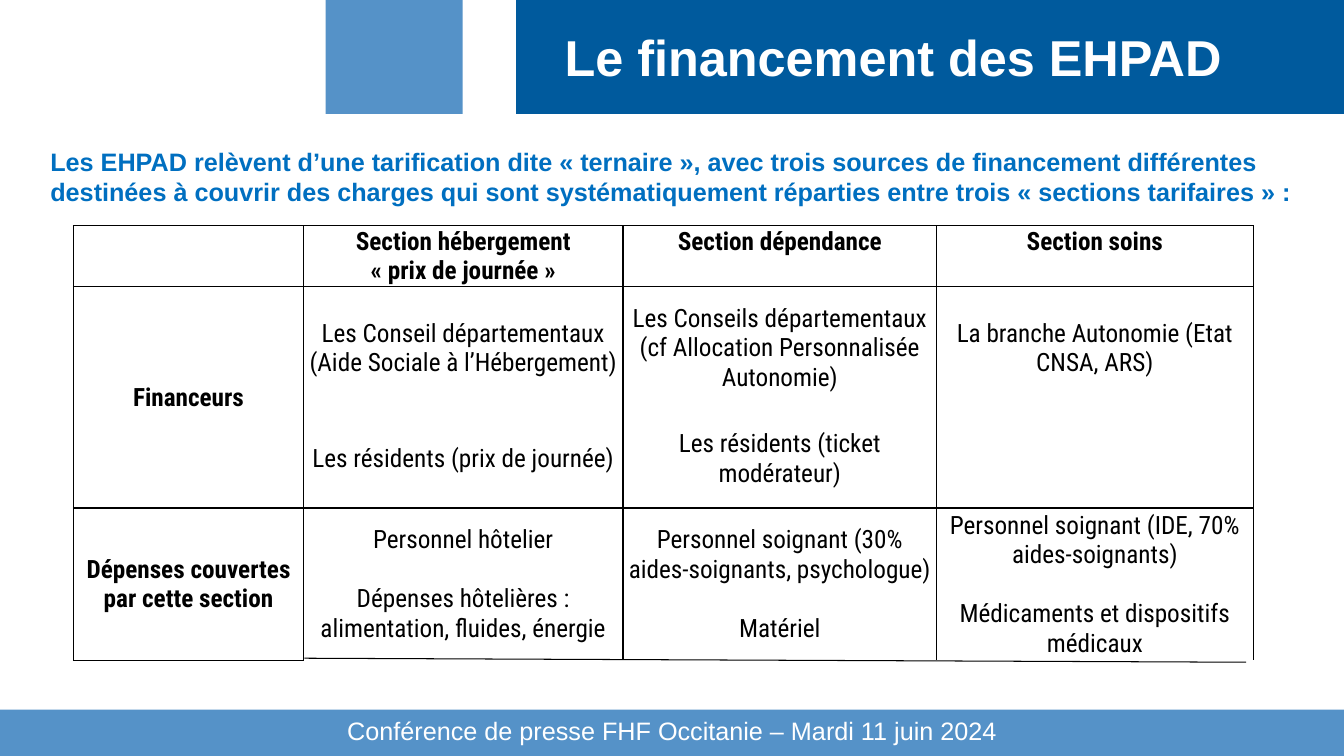
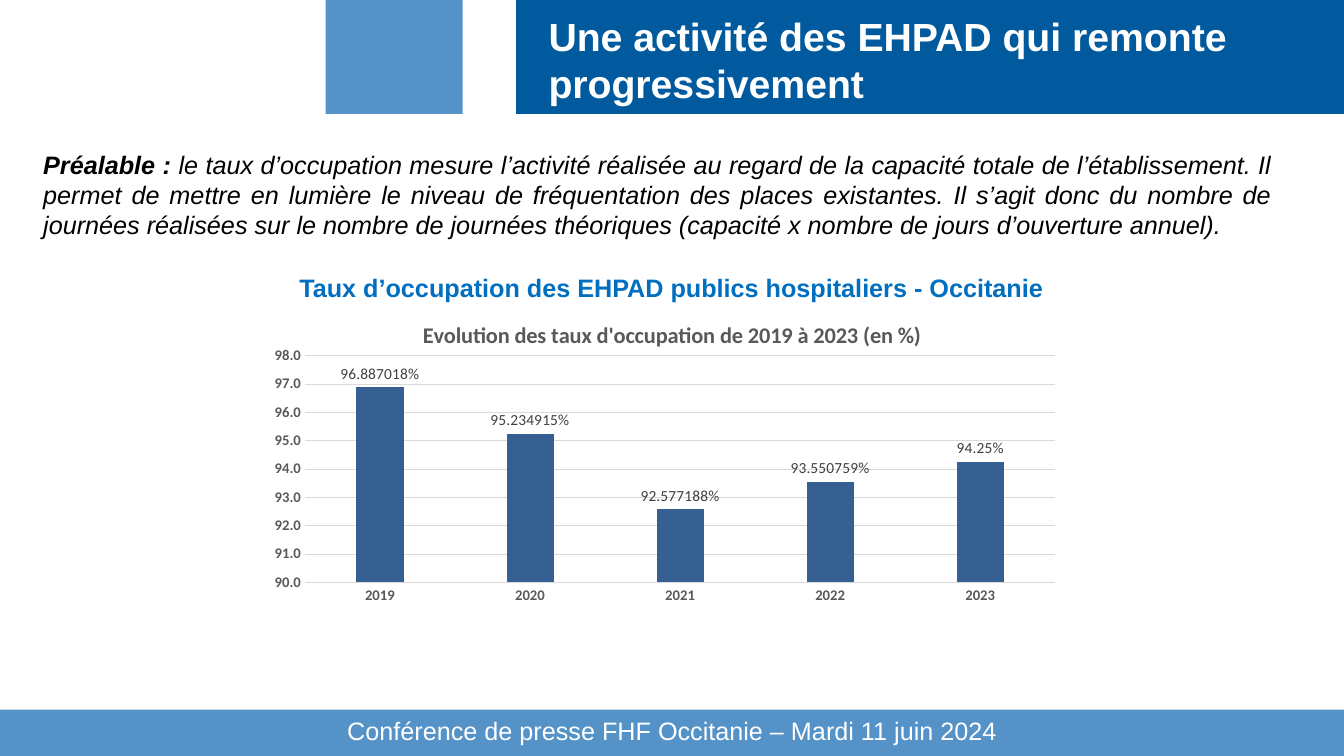
from dataclasses import dataclass

from lxml import etree
from pptx import Presentation
from pptx.chart.data import CategoryChartData
from pptx.dml.color import RGBColor as Rgb
from pptx.enum.chart import XL_CHART_TYPE, XL_LABEL_POSITION, XL_TICK_MARK
from pptx.enum.shapes import MSO_CONNECTOR, MSO_SHAPE
from pptx.enum.text import MSO_ANCHOR as Anchor
from pptx.enum.text import MSO_AUTO_SIZE as AutoSize
from pptx.enum.text import PP_ALIGN as Align
from pptx.oxml import parse_xml
from pptx.oxml.ns import nsdecls, qn
from pptx.util import Inches, Pt


@dataclass(frozen=True)
class Theme:
    light_blue: str = "5592C8"
    dark_blue: str = "005A9D"
    heading_blue: str = "006FC0"
    bar_blue: str = "376092"
    white: str = "FFFFFF"
    black: str = "000000"
    axis_text: str = "595959"
    label_text: str = "404040"
    grid: str = "D9D9D9"
    text_font: str = "Arial"
    table_font: str = "Roboto Condensed"
    chart_font: str = "Calibri"
    title_size: float = 36
    long_title_size: float = 28
    body_size: float = 18
    chart_title_size: float = 16
    label_size: float = 11
    axis_size: float = 10.5
    blank_line: float = 21


THEME = Theme()
PAGE = (13.33, 7.5)
FOOTER = "Conférence de presse FHF Occitanie – Mardi 11 juin 2024"
PLAIN_TABLE = "{2D5ABB26-0587-4C30-8999-92F81FD0307C}"

# Table texts: every cell is a list of paragraphs
FUNDING = [
    [[], ["Section hébergement", "« prix de journée »"],
     ["Section dépendance"], ["Section soins"]],
    [["Financeurs"],
     ["Les Conseil départementaux (Aide Sociale à l’Hébergement)"],
     ["Les Conseils départementaux (cf Allocation Personnalisée Autonomie)"],
     ["La branche Autonomie (Etat CNSA, ARS)"]],
    [[], ["Les résidents (prix de journée)"],
     ["Les résidents (ticket modérateur)"], []],
    [["Dépenses couvertes par cette section"],
     ["Personnel hôtelier",
      "Dépenses hôtelières : alimentation, fluides, énergie"],
     ["Personnel soignant (30% aides-soignants, psychologue)", "Matériel"],
     ["Personnel soignant (IDE, 70% aides-soignants)",
      "Médicaments et dispositifs médicaux"]],
]
COLUMN_WIDTHS = (2.28, 3.17, 3.11, 3.14)
ROW_HEIGHTS = (0.6, 1.22, 0.98, 1.51)
ROW_EDGES = ("LRTB", "LRT", "LRB", "LRT")

OCCUPANCY = {"2019": 96.887018, "2020": 95.234915, "2021": 92.577188,
             "2022": 93.550759, "2023": 94.25}
PREAMBLE = (
    "le taux d’occupation mesure l’activité réalisée au regard de la capacité "
    "totale de l’établissement. Il permet de mettre en lumière le niveau de "
    "fréquentation des places existantes. Il s’agit donc du nombre de journées "
    "réalisées sur le nombre de journées théoriques (capacité x nombre de jours "
    "d’ouverture annuel).")


def inches(box):
    return [Inches(value) for value in box]


def style_font(font, size, color, bold=False, name=THEME.text_font, italic=False):
    font.name, font.size = name, Pt(size)
    font.bold, font.italic = bold, italic
    font.color.rgb = Rgb.from_string(color)


def fill_text(frame, lines, align, **style):
    """Write the lines as paragraphs of one style."""
    frame.text = "\n".join(lines)
    for para in frame.paragraphs:
        para.alignment = align
        for span in para.runs:
            style_font(span.font, **style)


def prepare_frame(frame, insets=(0, 0.01, 0, 0)):
    frame.word_wrap = True
    frame.auto_size = AutoSize.NONE
    frame.vertical_anchor = Anchor.TOP
    (frame.margin_left, frame.margin_top,
     frame.margin_right, frame.margin_bottom) = inches(insets)


def add_text(page, box, lines, align, color, bold=False):
    frame = page.shapes.add_textbox(*inches(box)).text_frame
    prepare_frame(frame)
    fill_text(frame, lines, align, size=THEME.body_size, color=color, bold=bold)
    return frame


# Shared frame of the slides
def add_layout_bands(layout, page):
    """Place the coloured bands in the layout, behind its placeholders."""
    bands = (((0, 7.04, PAGE[0], 0.46), THEME.light_blue),
             ((5.12, 0, PAGE[0] - 5.12, 1.13), THEME.dark_blue),
             ((3.23, 0, 1.36, 1.13), THEME.light_blue))
    for index, (box, color) in enumerate(bands):
        band = page.shapes.add_shape(MSO_SHAPE.RECTANGLE, *inches(box))
        band.shadow.inherit = False
        band.fill.solid()
        band.fill.fore_color.rgb = Rgb.from_string(color)
        band.line.fill.background()
        band.element.nvSpPr.cNvPr.set("id", str(20 + index))
        layout.shapes.element.insert(2 + index, band.element)


def add_frame(page, title, box, size):
    heading = page.shapes.title
    heading.left, heading.top, heading.width, heading.height = inches(box)
    prepare_frame(heading.text_frame)
    fill_text(heading.text_frame, [title], Align.LEFT,
              size=size, color=THEME.white, bold=True)
    footer = add_text(page, (2.74, 7.11, 7.85, 0.29), [FOOTER],
                      Align.CENTER, THEME.white)
    footer.margin_top = 0
    footer.paragraphs[0].line_spacing = Pt(20.9)


# Funding table
def set_borders(cell, edges):
    properties = cell._tc.get_or_add_tcPr()
    for index, edge in enumerate("LRTB"):
        paint = (f'<a:solidFill><a:srgbClr val="{THEME.black}"/></a:solidFill>'
                 if edge in edges else "<a:noFill/>")
        properties.insert(index, parse_xml(
            f'<a:ln{edge} {nsdecls("a")} w="12700">{paint}</a:ln{edge}>'))


def fill_cell(cell, lines, row, column):
    cell.fill.background()
    set_borders(cell, "LRTB" if column == 0 else ROW_EDGES[row])
    cell.margin_left = cell.margin_right = cell.margin_top = Inches(0.01)
    cell.margin_bottom = 0
    cell.vertical_anchor = Anchor.TOP if row == 0 else Anchor.MIDDLE
    if not lines:
        return
    fill_text(cell.text_frame, lines, Align.CENTER, size=THEME.body_size,
              color=THEME.black, bold=row == 0 or column == 0,
              name=THEME.table_font)
    if row > 0:
        for para in cell.text_frame.paragraphs[1:]:
            para.space_before = Pt(THEME.blank_line)


def add_funding_table(page, left, top):
    width, height = sum(COLUMN_WIDTHS), sum(ROW_HEIGHTS)
    table = page.shapes.add_table(len(FUNDING), len(COLUMN_WIDTHS),
                                  *inches((left, top, width, height))).table
    table.first_row = table.horz_banding = False
    table._tbl.tblPr.find(qn("a:tableStyleId")).text = PLAIN_TABLE
    for column, size in zip(table.columns, COLUMN_WIDTHS):
        column.width = Inches(size)
    for row, size in zip(table.rows, ROW_HEIGHTS):
        row.height = Inches(size)
    table.cell(1, 0).merge(table.cell(2, 0))
    for row, texts in enumerate(FUNDING):
        for column, lines in enumerate(texts):
            fill_cell(table.cell(row, column), lines, row, column)

    # Closing rule under the last row
    bottom = top + height
    rule = page.shapes.add_connector(
        MSO_CONNECTOR.STRAIGHT,
        *inches((left + 2.29, bottom - 0.02, left + 11.63, bottom + 0.02)))
    rule.line.color.rgb = Rgb.from_string(THEME.black)
    rule.line.width = Pt(0.75)
    etree.SubElement(rule.element.spPr, qn("a:effectLst"))


# Occupancy chart
def style_line(line, color):
    line.color.rgb = Rgb.from_string(color)
    line.width = Pt(0.75)


def set_plot_area(chart, x, y, w, h):
    area = chart.element.find(".//" + qn("c:plotArea"))
    for old in area.findall(qn("c:layout")):
        area.remove(old)
    modes = "".join(f'<c:{axis}Mode val="edge"/>' for axis in "xy")
    sizes = "".join(f'<c:{key} val="{value}"/>'
                    for key, value in zip("xywh", (x, y, w, h)))
    area.insert(0, parse_xml(
        f'<c:layout {nsdecls("c")}><c:manualLayout><c:layoutTarget val="inner"/>'
        f"{modes}{sizes}</c:manualLayout></c:layout>"))


def add_occupancy_chart(page, box):
    data = CategoryChartData()
    data.categories = list(OCCUPANCY)
    data.add_series("Taux d'occupation", list(OCCUPANCY.values()))
    chart = page.shapes.add_chart(XL_CHART_TYPE.COLUMN_CLUSTERED,
                                  *inches(box), data).chart
    chart.has_legend = False
    style_font(chart.font, THEME.axis_size, THEME.axis_text, name=THEME.chart_font)
    chart.has_title = True
    fill_text(chart.chart_title.text_frame,
              ["Evolution des taux d'occupation de 2019 à 2023 (en %)"],
              Align.CENTER, size=THEME.chart_title_size, color=THEME.axis_text,
              bold=True, name=THEME.chart_font)
    set_plot_area(chart, 0.05, 0.17, 0.92, 0.75)

    # Bars and their labels
    plot = chart.plots[0]
    plot.vary_by_categories = False
    plot.gap_width, plot.overlap = 219, -27
    bars = plot.series[0].format.fill
    bars.solid()
    bars.fore_color.rgb = Rgb.from_string(THEME.bar_blue)
    plot.has_data_labels = True
    labels = plot.data_labels
    labels.show_value = True
    labels.position = XL_LABEL_POSITION.OUTSIDE_END
    labels.number_format = '0.######"%"'
    labels.number_format_is_linked = False
    style_font(labels.font, THEME.label_size, THEME.label_text,
               name=THEME.chart_font)

    # Axes
    years, rates = chart.category_axis, chart.value_axis
    for axis in (years, rates):
        axis.major_tick_mark = axis.minor_tick_mark = XL_TICK_MARK.NONE
        style_font(axis.tick_labels.font, THEME.axis_size, THEME.axis_text,
                   bold=True, name=THEME.chart_font)
    style_line(years.format.line, THEME.grid)
    rates.minimum_scale, rates.maximum_scale, rates.major_unit = 90, 98, 1
    rates.tick_labels.number_format = "0.0"
    rates.tick_labels.number_format_is_linked = False
    rates.format.line.fill.background()
    style_line(rates.major_gridlines.format.line, THEME.grid)


def add_preamble(page, box):
    frame = page.shapes.add_textbox(*inches(box)).text_frame
    prepare_frame(frame, (0.1, 0.05, 0.1, 0.05))
    para = frame.paragraphs[0]
    para.alignment = Align.JUSTIFY
    for text, bold in (("Préalable : ", True), (PREAMBLE, False)):
        span = para.add_run()
        span.text = text
        style_font(span.font, THEME.body_size, THEME.black, bold, italic=True)


# Slides
def build_funding_slide(page):
    add_frame(page, "Le financement des EHPAD", (5.6, 0.25, 7.7, 0.62),
              THEME.title_size)
    add_text(page, (0.5, 1.44, 12.5, 0.62), [
        "Les EHPAD relèvent d’une tarification dite « ternaire », "
        "avec trois sources de financement différentes",
        "destinées à couvrir des charges qui sont systématiquement réparties "
        "entre trois « sections tarifaires » :",
    ], Align.JUSTIFY, THEME.heading_blue, bold=True)
    add_funding_table(page, 0.73, 2.24)


def build_occupancy_slide(page):
    add_frame(page, "Une activité des EHPAD qui remonte progressivement",
              (5.44, 0.11, 7.85, 0.96), THEME.long_title_size)
    add_text(page, (2.16, 2.69, 9, 0.32),
             ["Taux d’occupation des EHPAD publics hospitaliers - Occitanie"],
             Align.CENTER, THEME.heading_blue, bold=True)
    add_occupancy_chart(page, (2.62, 3.02, 8.09, 3))
    add_preamble(page, (0.33, 1.43, 12.38, 1.01))


def main():
    deck = Presentation()
    deck.slide_width, deck.slide_height = inches(PAGE)
    layout = deck.slide_layouts[5]
    funding, occupancy = (deck.slides.add_slide(layout) for _ in range(2))
    add_layout_bands(layout, funding)
    build_funding_slide(funding)
    build_occupancy_slide(occupancy)
    deck.save("out.pptx")


if __name__ == "__main__":
    main()
